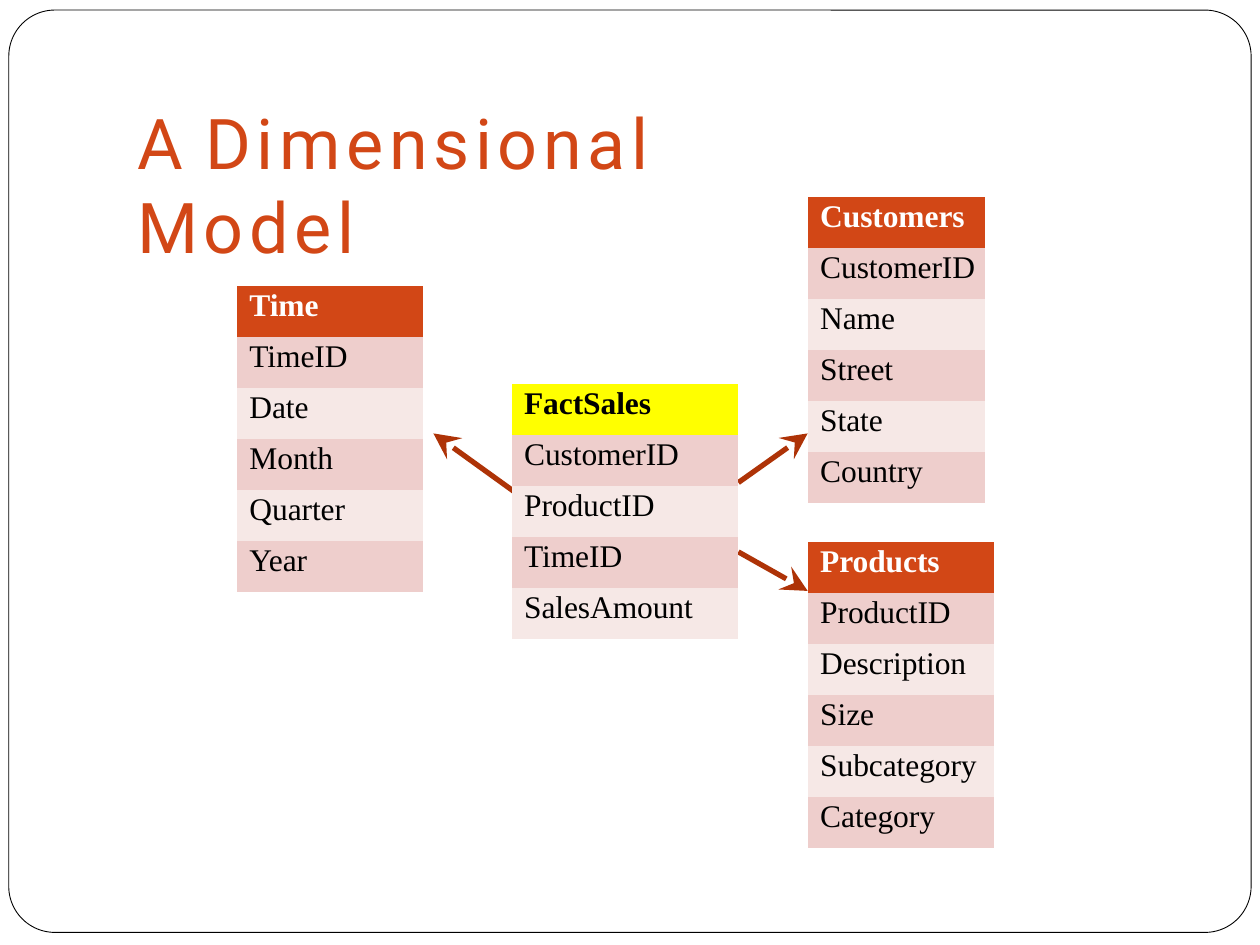
"""Builds a slide that shows a dimensional model as linked tables."""
from dataclasses import dataclass

from lxml import etree
from pptx import Presentation
from pptx import util as u
from pptx.dml.color import RGBColor
from pptx.enum import shapes, text
from pptx.oxml.ns import qn


@dataclass(frozen=True)
class Theme:
    """Colours, fonts and type sizes."""
    accent: str = "D24716"
    arrow: str = "AE3307"
    fact: str = "FFFF00"
    bands: tuple = ("EECECC", "F6E8E6")
    dark: str = "000000"
    light: str = "FFFFFF"
    title_font: str = "Roboto"
    body_font: str = "Times New Roman"
    title_size: int = 40
    body_size: int = 18
    plain_table: str = "{2D5ABB26-0587-4C30-8999-92F81FD0307C}"


class ModelSlide:
    """Draws on one slide, measured on a grid of 100 columns by 75 rows."""

    COLUMNS, ROWS = 100, 75

    def __init__(self, deck, theme):
        self.theme = theme
        self.slide = deck.slides.add_slide(deck.slide_layouts[6])
        self.column = deck.slide_width / self.COLUMNS
        self.row = deck.slide_height / self.ROWS

    def place(self, *grid):
        """Turn alternating columns and rows into lengths."""
        return [u.Emu(round(value * (self.row if i % 2 else self.column)))
                for i, value in enumerate(grid)]

    def run(self, paragraph, words, font, size, colour, bold=False, spacing=0.0):
        """Add one styled run."""
        run = paragraph.add_run()
        run.text = words
        run.font.name, run.font.size, run.font.bold = font, u.Pt(size), bold
        run.font.color.rgb = RGBColor.from_string(colour)
        run.font._element.set("spc", str(round(spacing * 100)))

    def frame(self, *grid, corner):
        """Add the rounded outline."""
        border = self.slide.shapes.add_shape(
            shapes.MSO_SHAPE.ROUNDED_RECTANGLE, *self.place(*grid))
        border.adjustments[0] = corner
        border.shadow.inherit = False
        border.fill.background()
        border.line.color.rgb = RGBColor.from_string(self.theme.dark)
        border.line.width = u.Pt(0.5)

    def title(self, words, *grid, stops):
        """Add the heading, with its words set on tab stops."""
        heading = self.slide.shapes.add_textbox(*self.place(*grid)).text_frame
        heading.word_wrap = True
        heading.margin_left = heading.margin_right = heading.margin_bottom = 0
        heading.margin_top = u.Inches(0.02)
        line = heading.paragraphs[0]
        tabs = etree.SubElement(line._p.get_or_add_pPr(), qn("a:tabLst"))
        for stop in stops:
            etree.SubElement(tabs, qn("a:tab"), pos=str(self.place(stop)[0]), algn="l")
        for i, word in enumerate(words):
            ending = "\t" if i < len(words) - 1 else ""
            self.run(line, word + ending, self.theme.title_font, self.theme.title_size,
                     self.theme.accent, spacing=3.25 if i else 0)

    def arrow(self, *grid):
        """Add an arrow from the fact table to a dimension."""
        link = self.slide.shapes.add_connector(
            shapes.MSO_CONNECTOR.STRAIGHT, *self.place(*grid))
        link.line.color.rgb = RGBColor.from_string(self.theme.arrow)
        link.line.width = u.Pt(3)
        etree.SubElement(link.line._get_or_add_ln(), qn("a:tailEnd"),
                         type="stealth", w="lg", len="lg")
        etree.SubElement(link._element.spPr, qn("a:effectLst"))

    def entity(self, name, fields, left, top, width, head_fill, head_colour):
        """Add a table with a header and banded fields."""
        names = [name, *fields]
        grid = self.slide.shapes.add_table(
            len(names), 1, *self.place(left, top, width, 4.05 * len(names))).table
        grid.horz_banding = grid.first_row = False
        grid._tbl.tblPr.find(qn("a:tableStyleId")).text = self.theme.plain_table
        for i, label in enumerate(names):
            header = i == 0
            cell = grid.cell(i, 0)
            cell.fill.solid()
            cell.fill.fore_color.rgb = RGBColor.from_string(
                head_fill if header else self.theme.bands[(i - 1) % 2])
            cell.margin_left = u.Inches(0.1)
            cell.margin_right = cell.margin_bottom = 0
            cell.margin_top = u.Inches(0.02)
            cell.vertical_anchor = text.MSO_ANCHOR.TOP
            self.run(cell.text_frame.paragraphs[0], label, self.theme.body_font,
                     self.theme.body_size, head_colour if header else self.theme.dark,
                     bold=header, spacing=-0.05)


def main():
    """Build and save the slide."""
    deck = Presentation()
    deck.slide_width, deck.slide_height = u.Inches(10), u.Inches(7.5)
    theme = Theme()
    model = ModelSlide(deck, theme)

    model.frame(0.7, 0.8, 98.6, 73.2, corner=0.05)
    for ends in ((58.6, 43.8, 64.1, 46.9), (58.6, 38.3, 64.1, 34.4),
                 (43, 40.6, 34.4, 34.4)):
        model.arrow(*ends)
    model.title(("A", "Dimensional", "Model"), 10.9, 7.7, 58, 6.9, stops=(5.4, 41.5))

    model.entity("FactSales", ("CustomerID", "ProductID", "TimeID", "SalesAmount"),
                 40.6, 30.5, 18, theme.fact, theme.dark)
    dimensions = (
        ("Products", ("ProductID", "Description", "Size", "Subcategory", "Category"),
         64.1, 43, 14.8),
        ("Customers", ("CustomerID", "Name", "Street", "State", "Country"),
         64.1, 15.6, 14.1),
        ("Time", ("TimeID", "Date", "Month", "Quarter", "Year"), 18.8, 22.7, 14.8),
    )
    for dimension in dimensions:
        model.entity(*dimension, theme.accent, theme.light)
    deck.save("out.pptx")


if __name__ == "__main__":
    main()
